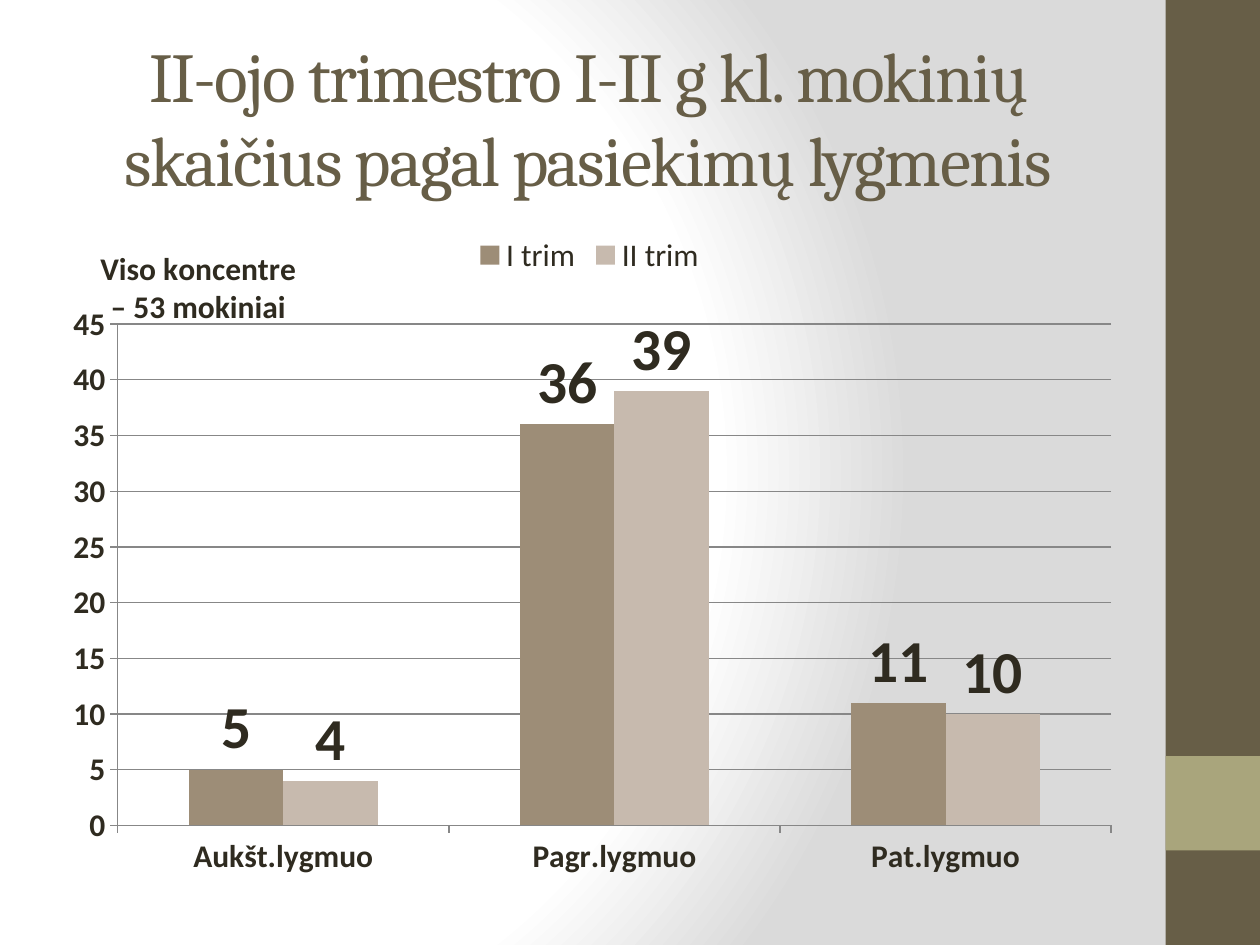
from pptx import Presentation
from pptx.chart.data import CategoryChartData
from pptx.dml.color import RGBColor
from pptx.enum.chart import XL_CHART_TYPE, XL_LABEL_POSITION, XL_LEGEND_POSITION, XL_TICK_MARK
from pptx.enum.shapes import MSO_SHAPE
from pptx.enum.text import MSO_ANCHOR, PP_ALIGN
from pptx.oxml import parse_xml
from pptx.oxml.ns import nsdecls
from pptx.util import Pt

BROWN, OLIVE, INK, GRID = "675E47", "A9A57C", "2F2B20", "878787"
CATEGORIES = ["Aukšt.lygmuo", "Pagr.lygmuo", "Pat.lygmuo"]
SERIES = [("I trim", (5, 36, 11), "9D8D77"), ("II trim", (4, 39, 10), "C7BAAE")]


def color(value):
    """Turn a hex string into a colour."""
    return RGBColor.from_string(value)


def format_font(font, size=18, bold=False, name="Calibri", fill=INK):
    """Set the look of a font."""
    font.size, font.bold, font.name = Pt(size), bold, name
    font.color.rgb = color(fill)


def set_background(slide):
    """Fill the background with a circular white to grey gradient."""
    slide.background.fill.solid()
    properties = slide.background.fill._xPr
    stops = "".join(
        f'<a:gs pos="{position * 1000}"><a:srgbClr val="{value}"/></a:gs>'
        for position, value in ((0, "FFFFFF"), (75, "FFFFFF"), (100, "DADADA"))
    )
    gradient = parse_xml(
        f'<a:gradFill {nsdecls("a")} rotWithShape="1"><a:gsLst>{stops}</a:gsLst>'
        '<a:path path="circle"><a:fillToRect l="20000" t="50000" r="100000" b="50000"/>'
        "</a:path></a:gradFill>"
    )
    properties.replace(properties[0], gradient)


def add_bar(slide, left, top, width, height, fill):
    """Add a plain filled rectangle."""
    shape = slide.shapes.add_shape(
        MSO_SHAPE.RECTANGLE, Pt(left), Pt(top), Pt(width), Pt(height)
    )
    shape.shadow.inherit = False
    shape.fill.solid()
    shape.fill.fore_color.rgb = color(fill)
    shape.line.fill.background()


def add_text(slide, text, left, top, width, height, spacing=0, **font):
    """Add a centred text box with the given font format."""
    frame = slide.shapes.add_textbox(Pt(left), Pt(top), Pt(width), Pt(height)).text_frame
    frame.word_wrap = True
    frame.vertical_anchor = MSO_ANCHOR.MIDDLE
    paragraph = frame.paragraphs[0]
    paragraph.alignment = PP_ALIGN.CENTER
    run = paragraph.add_run()
    run.text = text
    format_font(run.font, **font)
    run.font._element.set("spc", str(spacing * 100))


def make_layout(x, y, width=None, height=None):
    """Return a manual chart layout in fractions of the chart."""
    values = [("xMode", "edge"), ("yMode", "edge"), ("x", x), ("y", y)]
    if width:
        values = [("layoutTarget", "inner"), *values, ("w", width), ("h", height)]
    items = "".join(f'<c:{tag} val="{value}"/>' for tag, value in values)
    return parse_xml(
        f'<c:layout {nsdecls("c")}><c:manualLayout>{items}</c:manualLayout></c:layout>'
    )


def set_layout(element, layout, position=0):
    """Replace the layout of a chart element."""
    for old in element.xpath("./c:layout"):
        element.remove(old)
    element.insert(position, layout)


def format_axis(axis):
    """Set axis labels, ticks and line."""
    format_font(axis.tick_labels.font, bold=True)
    axis.major_tick_mark = XL_TICK_MARK.OUTSIDE
    axis.minor_tick_mark = XL_TICK_MARK.NONE
    axis.format.line.color.rgb = color(GRID)


def format_value_axis(axis):
    """Set the scale, gridlines and horizontal title of the value axis."""
    format_axis(axis)
    axis.minimum_scale, axis.maximum_scale, axis.major_unit = 0, 45, 5
    axis.major_gridlines.format.line.color.rgb = color(GRID)
    title = axis.axis_title
    frame = title.text_frame
    run = frame.paragraphs[0].add_run()
    run.text = "Viso koncentre – 53 mokiniai"
    format_font(run.font, bold=True)
    frame._txBody.bodyPr.set("rot", "0")
    frame._txBody.bodyPr.set("vert", "horz")
    set_layout(title._element, make_layout(0.03, 0.03), 1)


def format_series(series, fill):
    """Set the fill and value labels of a series."""
    series.format.fill.solid()
    series.format.fill.fore_color.rgb = color(fill)
    series.invert_if_negative = False
    labels = series.data_labels
    labels.show_value = True
    labels.position = XL_LABEL_POSITION.OUTSIDE_END
    format_font(labels.font, size=34, bold=True)


def add_column_chart(slide, left, top, width, height):
    """Add the clustered column chart of pupils by level."""
    data = CategoryChartData()
    data.categories = CATEGORIES
    for name, values, _ in SERIES:
        data.add_series(name, values)
    chart = slide.shapes.add_chart(
        XL_CHART_TYPE.COLUMN_CLUSTERED, Pt(left), Pt(top), Pt(width), Pt(height), data
    ).chart
    format_font(chart.font)
    chart.has_title = False
    chart.has_legend = True
    chart.legend.position = XL_LEGEND_POSITION.TOP
    chart.legend.include_in_layout = False
    format_font(chart.legend.font)
    format_axis(chart.category_axis)
    format_value_axis(chart.value_axis)
    plot = chart.plots[0]
    plot.vary_by_categories = False
    plot.gap_width, plot.overlap = 150, 0
    for series, (_, _, fill) in zip(plot.series, SERIES):
        format_series(series, fill)
    plot_area = chart._chartSpace.chart.plotArea
    set_layout(plot_area, make_layout(0.052, 0.155, 0.943, 0.75))


def main():
    """Build and save the slide."""
    presentation = Presentation()
    presentation.slide_width, presentation.slide_height = Pt(720), Pt(540)
    slide = presentation.slides.add_slide(presentation.slide_layouts[6])
    set_background(slide)
    add_bar(slide, 666, 0, 54, 540, BROWN)
    add_bar(slide, 666, 432, 54, 54, OLIVE)
    add_text(
        slide, "II-ojo trimestro I-II g kl. mokinių skaičius pagal pasiekimų lygmenis",
        36, 21.6, 600, 90, spacing=-1, size=40, name="Cambria", fill=BROWN,
    )
    add_column_chart(slide, 36, 126, 602, 382)
    presentation.save("out.pptx")


if __name__ == "__main__":
    main()
